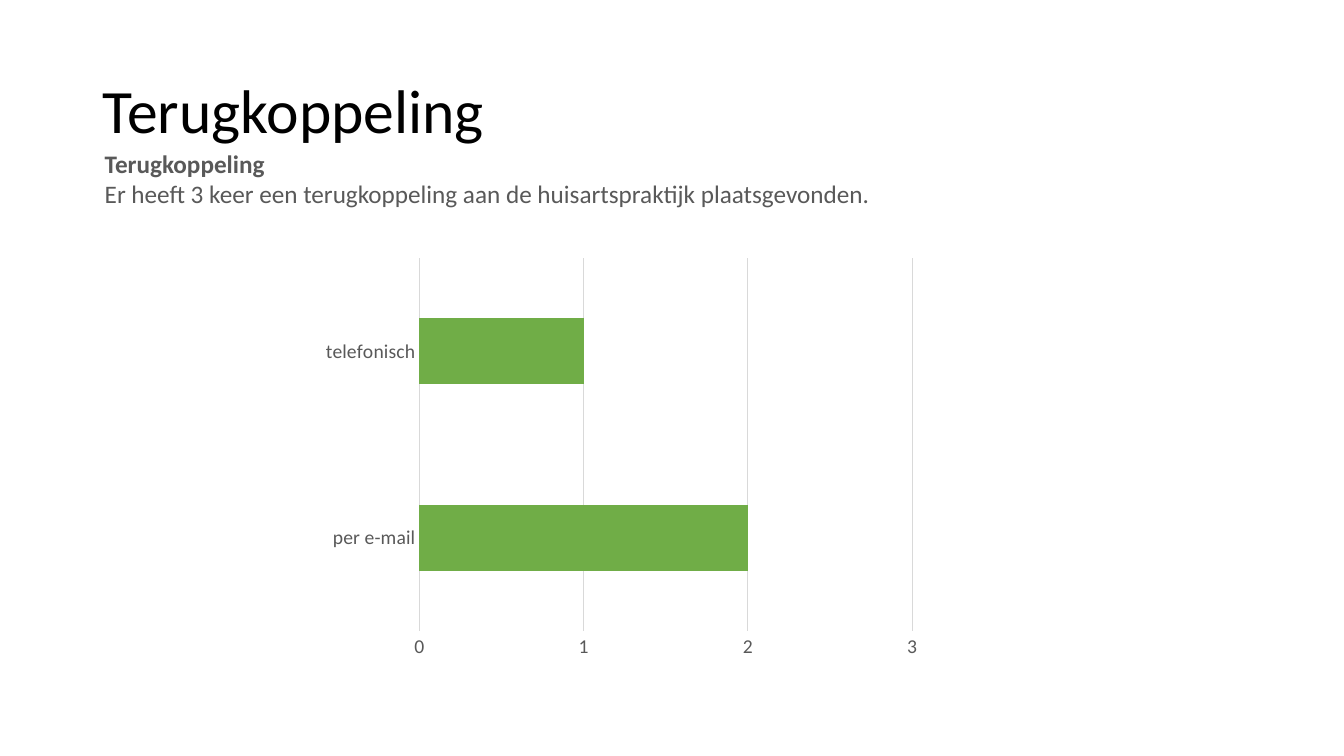
from dataclasses import dataclass

from pptx import Presentation
from pptx.chart.axis import CategoryAxis, ValueAxis
from pptx.chart.data import CategoryChartData
from pptx.dml.color import RGBColor
from pptx.enum.chart import XL_CHART_TYPE, XL_TICK_MARK
from pptx.enum.text import MSO_ANCHOR
from pptx.slide import Slide
from pptx.text.text import Font
from pptx.util import Inches, Pt

BAR = XL_CHART_TYPE.BAR_CLUSTERED
NO_TICK = XL_TICK_MARK.NONE
TOP, MIDDLE = MSO_ANCHOR.TOP, MSO_ANCHOR.MIDDLE

FONT = "Calibri"
COLORS = {"title": "000000", "text": "595959", "line": "D9D9D9", "bar": "70AD47"}


@dataclass(frozen=True)
class Line:
    text: str
    bold: bool = False


@dataclass(frozen=True)
class TextBlock:
    box: tuple[float, float, float, float]
    lines: tuple[Line, ...]
    size: int
    color: str
    anchor: MSO_ANCHOR = TOP
    spacing: float = 1.0


TEXTS = (
    TextBlock((0.92, 0.4, 11.5, 1.45), (Line("Terugkoppeling"),),
              44, "title", MIDDLE, 0.9),
    TextBlock((0.94, 1.42, 9.08, 0.71),
              (Line("Terugkoppeling", bold=True),
               Line("Er heeft 3 keer een terugkoppeling aan de huisartspraktijk plaatsgevonden.")),
              18, "text"),
)
CHART_BOX = (3.11, 2.48, 6.11, 4.14)
FEEDBACK = {"per e-mail": 2, "telefonisch": 1}


def rgb(name: str) -> RGBColor:
    return RGBColor.from_string(COLORS[name])


def style_font(font: Font, size: int, color: str, bold: bool = False) -> None:
    font.name = FONT
    font.size = Pt(size)
    font.bold = bold
    font.color.rgb = rgb(color)


def add_text(s: Slide, block: TextBlock) -> None:
    tf = s.shapes.add_textbox(*map(Inches, block.box)).text_frame
    tf.word_wrap = True
    tf.vertical_anchor = block.anchor
    p = tf.paragraphs[0]
    p.line_spacing = block.spacing
    for i, line in enumerate(block.lines):
        if i:
            p.add_line_break()
        r = p.add_run()
        r.text = line.text
        style_font(r.font, block.size, block.color, line.bold)


def style_axis(axis: CategoryAxis | ValueAxis) -> None:
    axis.major_tick_mark = axis.minor_tick_mark = NO_TICK
    style_font(axis.tick_labels.font, 14, "text")


def add_feedback_chart(s: Slide) -> None:
    data = CategoryChartData()
    data.categories = list(FEEDBACK)
    data.add_series("Series 1", list(FEEDBACK.values()))
    chart = s.shapes.add_chart(BAR, *map(Inches, CHART_BOX), data).chart
    chart.has_legend = False
    chart.has_title = False
    style_font(chart.font, 14, "title")

    plot = chart.plots[0]
    plot.gap_width = 182
    plot.vary_by_categories = False
    fill = plot.series[0].format.fill
    fill.solid()
    fill.fore_color.rgb = rgb("bar")

    cat, val = chart.category_axis, chart.value_axis
    style_axis(cat)
    style_axis(val)
    val.minimum_scale, val.maximum_scale, val.major_unit = 0, 3, 1
    val.has_major_gridlines = True
    val.format.line.fill.background()
    for line in (cat.format.line, val.major_gridlines.format.line):
        line.color.rgb = rgb("line")
        line.width = Pt(0.75)


def main() -> None:
    prs = Presentation()
    prs.slide_width, prs.slide_height = Inches(13.33), Inches(7.5)
    s = prs.slides.add_slide(prs.slide_layouts[6])
    for block in TEXTS:
        add_text(s, block)
    add_feedback_chart(s)
    prs.save("out.pptx")


if __name__ == "__main__":
    main()
